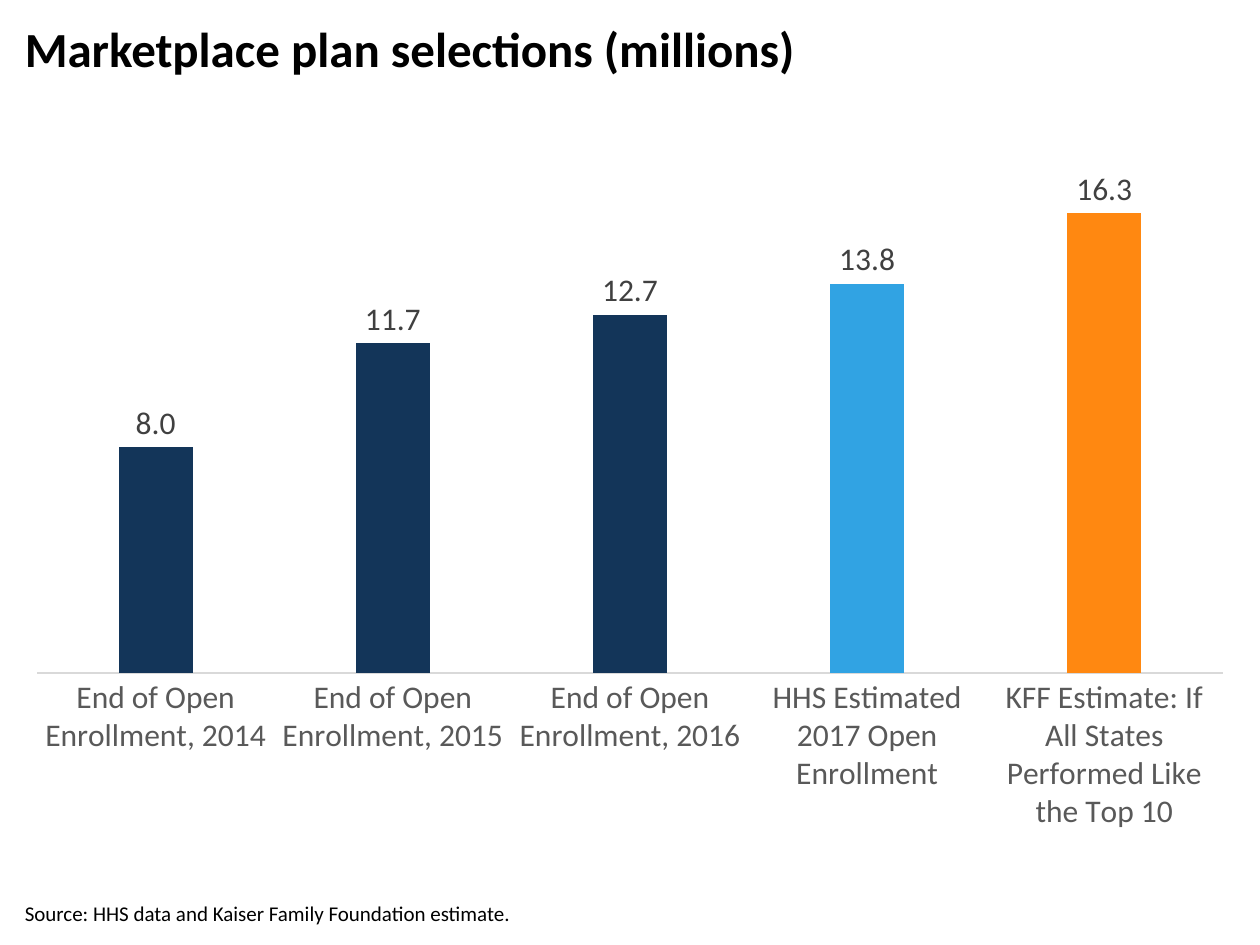
from pptx import Presentation
from pptx.chart.data import CategoryChartData
from pptx.dml.color import RGBColor
from pptx.enum.chart import XL_CHART_TYPE, XL_LABEL_POSITION, XL_TICK_MARK
from pptx.enum.text import MSO_ANCHOR
from pptx.util import Cm, Pt

COLUMN = XL_CHART_TYPE.COLUMN_CLUSTERED
ABOVE = XL_LABEL_POSITION.OUTSIDE_END
NO_TICK = XL_TICK_MARK.NONE
TOP, BOTTOM = MSO_ANCHOR.TOP, MSO_ANCHOR.BOTTOM
FONT = "Calibri"
NAVY, BLUE, ORANGE = "133559", "31A3E3", "FF8811"


def paint(color, value):
    color.rgb = RGBColor.from_string(value)


def write(text, *, top, width, height, size, bold=False, anchor=TOP):
    box = slide.shapes.add_textbox(Cm(0.25), Cm(top), Cm(width), Cm(height))
    frame = box.text_frame
    frame.word_wrap = True
    frame.vertical_anchor = anchor
    frame.text = text
    font = frame.paragraphs[0].runs[0].font
    font.name, font.size, font.bold = FONT, Pt(size), bold
    paint(font.color, "000000")


deck = Presentation()
deck.slide_width, deck.slide_height = Cm(25.4), Cm(19.05)
slide = deck.slides.add_slide(deck.slide_layouts[6])

# Chart data
data = CategoryChartData(number_format="#,##0.0")
data.categories = [f"End of Open Enrollment, {year}" for year in (2014, 2015, 2016)] + [
    "HHS Estimated 2017 Open Enrollment",
    "KFF Estimate: If All States Performed Like the Top 10",
]
data.add_series("Series 1", (8, 11.7, 12.7, 13.8, 16.3))
chart = slide.shapes.add_chart(
    COLUMN, Cm(0.25), Cm(3.05), Cm(24.9), Cm(13.97), data
).chart
chart.has_legend = False
chart.has_title = False
chart.font.name, chart.font.size = FONT, Pt(10)
paint(chart.font.color, "000000")

# Axes
years = chart.category_axis
years.major_tick_mark = years.minor_tick_mark = NO_TICK
years.format.line.width = Pt(0.75)
years.format.line.fill.solid()
paint(years.format.line.color, "D9D9D9")
scale = chart.value_axis
scale.minimum_scale, scale.maximum_scale = 0, 18
scale.has_major_gridlines = False
scale.visible = False

# Columns, with both estimates set apart by colour
plot = chart.plots[0]
plot.gap_width, plot.overlap = 219, -27
plot.vary_by_categories = False
bars = plot.series[0]
bars.invert_if_negative = False
fills = [(bars, NAVY), (bars.points[3], BLUE), (bars.points[4], ORANGE)]
for part, color in fills:
    part.format.fill.solid()
    paint(part.format.fill.fore_color, color)

# Value labels
labels = bars.data_labels
labels.show_value = True
labels.position = ABOVE
labels.number_format = "#,##0.0"
labels.number_format_is_linked = False
for font, color in ((years.tick_labels.font, "595959"), (labels.font, "404040")):
    font.name, font.size = FONT, Pt(18)
    paint(font.color, color)

# Source and title
write("Source: HHS data and Kaiser Family Foundation estimate.",
      top=17.27, width=23.11, height=1.52, size=12, anchor=BOTTOM)
write("Marketplace plan selections (millions)",
      top=0.25, width=24.9, height=2.54, size=28, bold=True)

deck.save("out.pptx")
